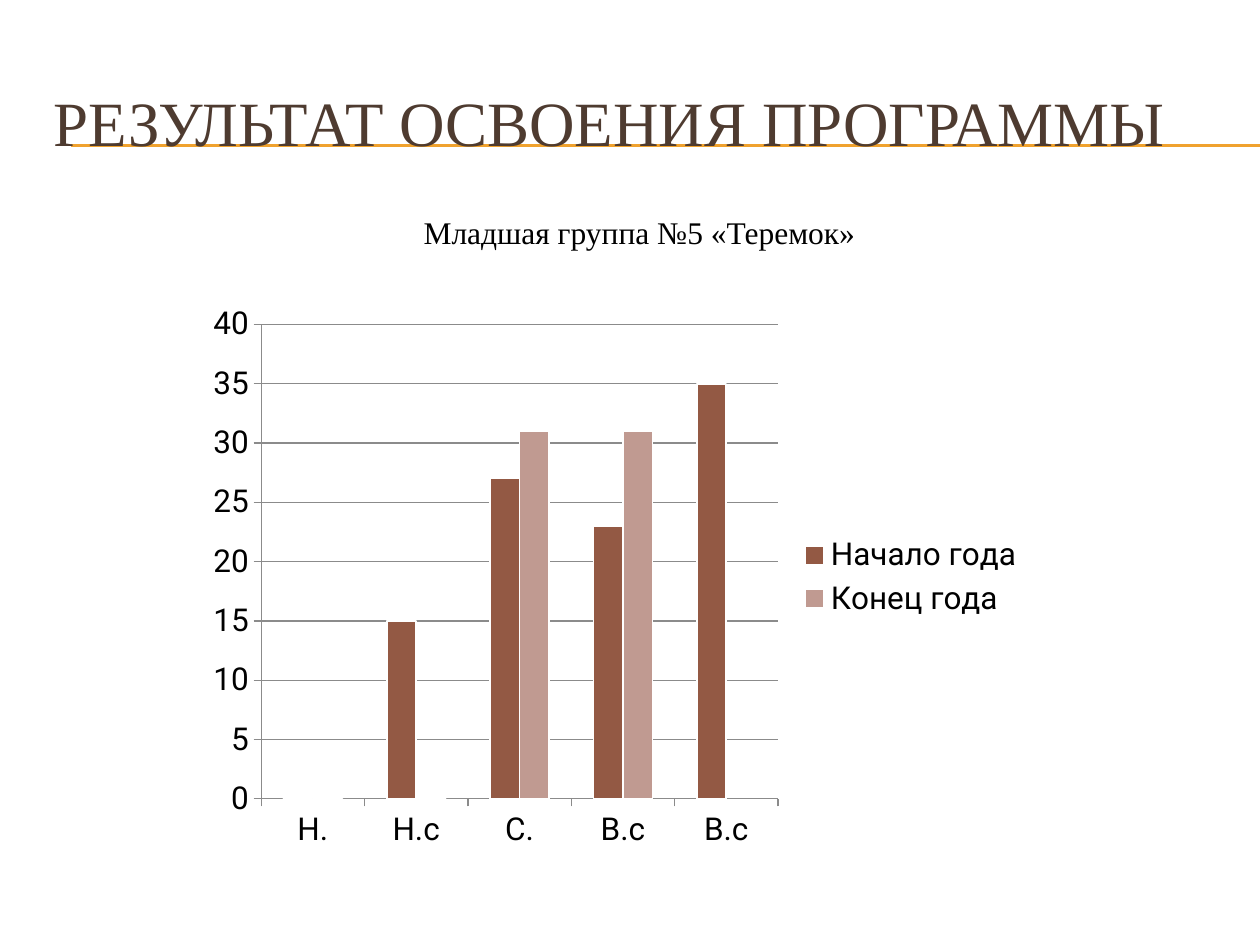
from typing import NamedTuple, Optional

from lxml import etree
from pptx import Presentation
from pptx import util as u
from pptx.chart.data import CategoryChartData
from pptx.dml.color import RGBColor
from pptx.enum import chart as ch, shapes, text
from pptx.oxml import ns

GRID_GREY = "8B8B8B"


class Caption(NamedTuple):
    wording: str
    left: float
    top: float
    width: float
    height: float
    size: int
    color: str
    align: text.PP_ALIGN
    anchor: text.MSO_ANCHOR


class Term(NamedTuple):
    name: str
    values: tuple[Optional[int], ...]
    color: str


CAPTIONS = (
    Caption("РЕЗУЛЬТАТ ОСВОЕНИЯ ПРОГРАММЫ", 0.33, 0.5, 9.5, 0.92, 36, "4E3B30",
            text.PP_ALIGN.LEFT, text.MSO_ANCHOR.MIDDLE),
    Caption("Младшая группа №5 «Теремок»", 2.03, 1.64, 6.09, 0.4, 18, "000000",
            text.PP_ALIGN.CENTER, text.MSO_ANCHOR.TOP),
)
LEVELS = ("Н.", "Н.с", "С.", "В.с", "В.с")
TERMS = (
    Term("Начало года", (0, 15, 27, 23, 35), "935944"),
    Term("Конец года", (0, 0, 31, 31, None), "C09A91"),
)


def rgb(hex_color: str) -> RGBColor:
    return RGBColor.from_string(hex_color)


def set_line(line, color: str, width: float = 0.75) -> None:
    line.color.rgb = rgb(color)
    line.width = u.Pt(width)


def draw_rule(slide, y: float) -> None:
    rule = slide.shapes.add_connector(
        shapes.MSO_CONNECTOR.STRAIGHT, u.Inches(0.56), u.Inches(y), u.Inches(10), u.Inches(y))
    set_line(rule.line, "F0A22E")
    etree.SubElement(rule._element.spPr, ns.qn("a:effectLst"))


def draw_caption(slide, caption: Caption) -> None:
    box = slide.shapes.add_textbox(
        u.Inches(caption.left), u.Inches(caption.top),
        u.Inches(caption.width), u.Inches(caption.height))
    frame = box.text_frame
    frame.word_wrap = True
    frame.vertical_anchor = caption.anchor
    paragraph = frame.paragraphs[0]
    paragraph.alignment = caption.align
    run = paragraph.add_run()
    run.text = caption.wording
    run.font.name = "Times New Roman"
    run.font.size = u.Pt(caption.size)
    run.font.color.rgb = rgb(caption.color)


def draw_results(slide) -> None:
    data = CategoryChartData()
    data.categories = LEVELS
    for term in TERMS:
        data.add_series(term.name, term.values)
    results = slide.shapes.add_chart(
        ch.XL_CHART_TYPE.COLUMN_CLUSTERED, u.Inches(1.56), u.Inches(2.34),
        u.Inches(6.67), u.Inches(4.48), data).chart
    results.has_title = False
    results.font.name = "Roboto"
    results.font.size = u.Pt(18)
    results.font.color.rgb = rgb("000000")

    # Legend
    results.has_legend = True
    results.legend.position = ch.XL_LEGEND_POSITION.RIGHT
    results.legend.include_in_layout = False

    # Columns
    columns = results.plots[0]
    columns.vary_by_categories = False
    columns.gap_width = 150
    columns.overlap = 0
    for series, term in zip(columns.series, TERMS):
        series.format.fill.solid()
        series.format.fill.fore_color.rgb = rgb(term.color)
        set_line(series.format.line, "FFFFFF", 1)

    # Axes
    scale = results.value_axis
    scale.minimum_scale, scale.maximum_scale, scale.major_unit = 0, 40, 5
    scale.has_major_gridlines = True
    set_line(scale.major_gridlines.format.line, GRID_GREY)
    for axis in (results.category_axis, scale):
        axis.major_tick_mark = ch.XL_TICK_MARK.OUTSIDE
        axis.minor_tick_mark = ch.XL_TICK_MARK.NONE
        set_line(axis.format.line, GRID_GREY)


def main() -> None:
    deck = Presentation()
    deck.slide_width, deck.slide_height = u.Inches(10), u.Inches(7.5)
    slide = deck.slides.add_slide(deck.slide_layouts[6])

    # Double rule behind the heading
    for y in (1.15, 1.16):
        draw_rule(slide, y)

    # Heading and group name
    for caption in CAPTIONS:
        draw_caption(slide, caption)

    draw_results(slide)
    deck.save("out.pptx")


if __name__ == "__main__":
    main()
